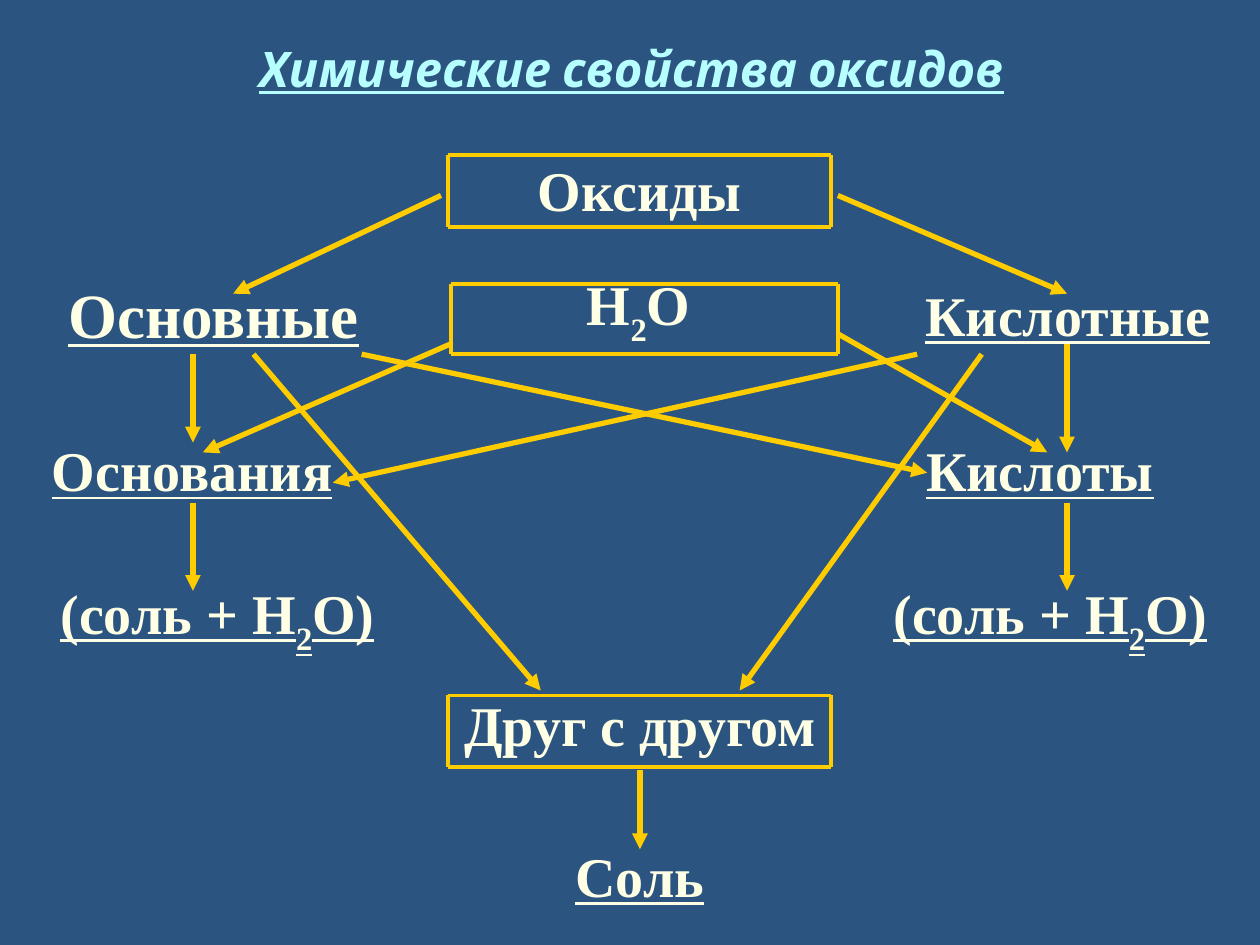
from lxml import etree
from pptx import Presentation
from pptx.dml.color import RGBColor
from pptx.enum import shapes, text
from pptx.oxml import ns
from pptx.util import Cm, Pt

NAVY = RGBColor(0x2B, 0x54, 0x81)
GOLD = RGBColor(0xFF, 0xCC, 0x00)
CREAM = RGBColor(0xFF, 0xFF, 0xE5)
AQUA = RGBColor(0xB7, 0xFF, 0xFF)
SERIF = "Times New Roman"

# Labels: words, left, top, width, height, underlined, size
LABELS = [
    ("Оксиды", 9.04, 3.12, 7.72, 1.4, False, 32),
    ("Основные", 0.51, 5.72, 7.59, 1.19, True, 36),
    ("Н2О", 9.04, 4.93, 7.67, 2.59, False, 32),
    ("Кислотные", 17.65, 5.92, 7.75, 0.84, True, 32),
    ("Основания", 0, 8.74, 7.75, 1.45, True, 32),
    ("Кислоты", 17.09, 8.74, 7.75, 1.45, True, 32),
    ("(соль + Н2О)", 0.51, 11.73, 7.75, 1.45, True, 32),
    ("(соль + Н2О)", 17.3, 11.73, 7.75, 1.45, True, 32),
    ("Друг с другом", 9.04, 13.72, 7.72, 1.75, False, 32),
    ("Соль", 9.04, 16.92, 7.72, 1.45, True, 32),
]

# Frames: left, top, right, bottom
FRAMES = [
    (9.04, 3.12, 16.76, 4.57),
    (9.09, 5.72, 16.89, 7.14),
    (9.04, 14.02, 16.76, 15.47),
]

# Arrows: start x, start y, end x, end y
ARROWS = [
    (8.89, 3.94, 4.7, 5.92),        # oxides to the two classes
    (16.89, 3.94, 21.51, 5.92),
    (3.89, 7.14, 3.89, 8.92),       # down the left and right columns
    (21.51, 6.93, 21.51, 9.12),
    (3.89, 10.13, 3.89, 11.91),
    (21.51, 10.13, 21.51, 11.91),
    (5.11, 7.14, 10.9, 13.92),      # classes with each other
    (19.79, 7.14, 14.91, 13.92),
    (18.49, 7.14, 6.71, 9.73),      # crossing reactions
    (7.29, 7.14, 18.69, 9.53),
    (9.09, 6.93, 4.09, 9.12),       # water to bases and acids
    (16.89, 6.73, 21.11, 9.12),
    (12.9, 15.52, 12.9, 17.12),     # to the salt
]


def add_text(slide, words, x, y, w, h, under, size,
             face=SERIF, color=CREAM, slant=False):
    box = slide.shapes.add_textbox(Cm(x), Cm(y), Cm(w), Cm(h))
    frame = box.text_frame
    frame.word_wrap = True
    frame.vertical_anchor = text.MSO_ANCHOR.MIDDLE
    frame.margin_left = frame.margin_right = 0
    frame.margin_top = frame.margin_bottom = 0
    para = frame.paragraphs[0]
    para.alignment = text.PP_ALIGN.CENTER
    # Digits in formulas are set as subscripts
    for part in words.replace("2", "|2|").split("|"):
        run = para.add_run()
        run.text = part
        font = run.font
        font.name, font.size, font.color.rgb = face, Pt(size), color
        font.bold, font.italic, font.underline = True, slant, under
        if part == "2":
            font._element.set("baseline", "-30000")


def add_line(slide, x1, y1, x2, y2, width):
    line = slide.shapes.add_connector(
        shapes.MSO_CONNECTOR.STRAIGHT, Cm(x1), Cm(y1), Cm(x2), Cm(y2))
    line.line.color.rgb = GOLD
    line.line.width = Pt(width)
    etree.SubElement(line._element.spPr, ns.qn("a:effectLst"))
    return line


def add_arrow(slide, *ends):
    line = add_line(slide, *ends, 3)
    etree.SubElement(line.line._get_or_add_ln(), ns.qn("a:tailEnd"),
                     type="triangle")


def add_frame(slide, x1, y1, x2, y2):
    for y in (y1, y2):
        add_line(slide, x1, y, x2, y, 2.25)
    for x in (x1, x2):
        add_line(slide, x, y1, x, y2, 2.25)


def main():
    deck = Presentation()
    deck.slide_width, deck.slide_height = Cm(25.4), Cm(19.05)
    slide = deck.slides.add_slide(deck.slide_layouts[6])
    fill = slide.background.fill
    fill.solid()
    fill.fore_color.rgb = NAVY

    # Title
    add_text(slide, "Химические свойства оксидов", 1.3, 0.53, 22.86, 1.68,
             True, 28, "Cabin", AQUA, True)

    # Scheme
    for label in LABELS:
        add_text(slide, *label)
    for frame in FRAMES:
        add_frame(slide, *frame)
    for arrow in ARROWS:
        add_arrow(slide, *arrow)

    deck.save("out.pptx")


if __name__ == "__main__":
    main()
